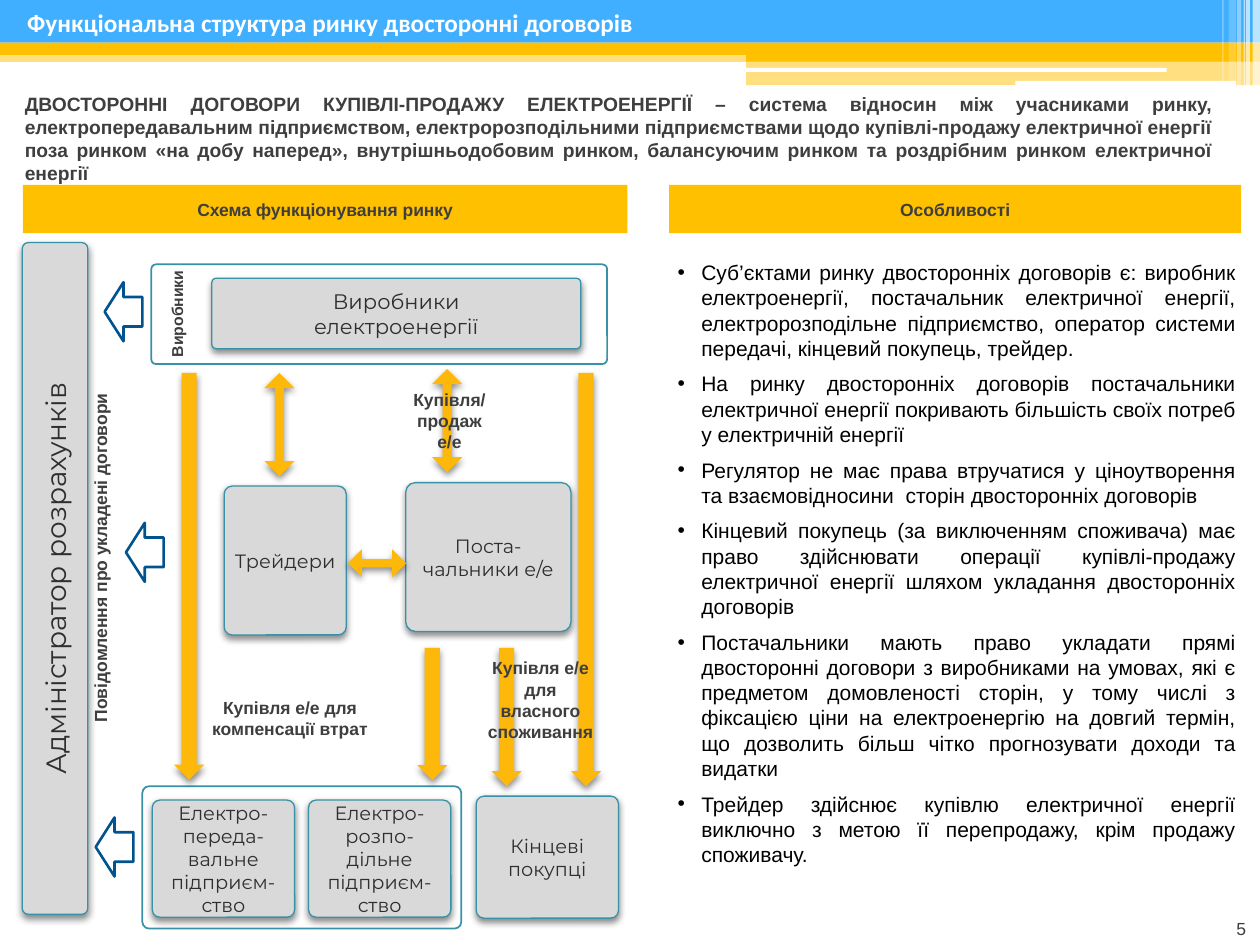
from lxml.etree import SubElement
from pptx import Presentation
from pptx.dml.color import RGBColor
from pptx.enum.shapes import MSO_SHAPE
from pptx.enum.text import MSO_ANCHOR, PP_ALIGN
from pptx.oxml.ns import qn
from pptx.util import Cm, Pt

AMBER, ARROW, BLUE, WHITE = "FFC000", "FEB80A", "40AFFF", "FFFFFF"
GREY, TEAL, NAVY = "D9D9D9", "3891A7", "00538E"
DARK, CARD_TEXT = "3E3E3E", "2E2E2E"

deck = Presentation()
deck.slide_width, deck.slide_height = Cm(25.4), Cm(19.05)
page = deck.slides.add_slide(deck.slide_layouts[6])


def add_block(kind, place, fill=None, line=None, weight=1, opacity=100, adjust=(), raised=False, turn=0):
    block = page.shapes.add_shape(kind, *[Cm(length) for length in place])
    block.rotation = turn
    for index, value in enumerate(adjust):
        block.adjustments[index] = value
    if fill:
        block.fill.solid()
        block.fill.fore_color.rgb = RGBColor.from_string(fill)
    else:
        block.fill.background()
    if opacity < 100:
        color = block.fill._xPr.find(qn("a:solidFill"))[0]
        SubElement(color, qn("a:alpha"), val=str(opacity * 1000))
    if line:
        block.line.color.rgb = RGBColor.from_string(line)
        block.line.width = Pt(weight)
    else:
        block.line.fill.background()
    block.shadow.inherit = False
    if raised:
        effects = block._element.spPr.find(qn("a:effectLst"))
        shadow = SubElement(effects, qn("a:outerShdw"), blurRad=str(Pt(4)), dist=str(Pt(2)),
                            dir="5400000", rotWithShape="0")
        color = SubElement(shadow, qn("a:srgbClr"), val="000000")
        SubElement(color, qn("a:alpha"), val="45000")
    return block


def write(box, lines, size, color=DARK, font="Arial", bold=False,
          align=PP_ALIGN.CENTER, anchor=MSO_ANCHOR.MIDDLE):
    frame = box.text_frame
    frame.word_wrap = True
    frame.vertical_anchor = anchor
    for index, line in enumerate(lines):
        para = frame.add_paragraph() if index else frame.paragraphs[0]
        para.text = line
        para.alignment = align
        for span in para.runs:
            span.font.size = Pt(size)
            span.font.name = font
            span.font.bold = bold
            span.font.color.rgb = RGBColor.from_string(color)


for place, fill, opacity in [
    ((0, 1.02, 25.4, 0.23), AMBER, 50),
    ((0, 0, 25.4, 0.86), BLUE, 100),
    ((0, 0.86, 25.4, 0.25), AMBER, 100),
    ((15.04, 0.99, 10.36, 0.25), AMBER, 100),
    ((15.04, 1.22, 10.36, 0.5), AMBER, 50),
    ((15.01, 1.37, 8.51, 0.08), WHITE, 100),
    ((20.47, 1.63, 4.45, 0.1), WHITE, 100),
    ((25.25, 0, 0.15, 1.73), WHITE, 65),
    ((25.12, 0, 0.08, 1.73), WHITE, 65),
    ((25.07, 0, 0.03, 1.73), WHITE, 60),
    ((24.94, 0, 0.08, 1.73), WHITE, 40),
    ((24.77, 0, 0.15, 1.63), WHITE, 20),
    ((24.64, 0, 0.03, 1.63), WHITE, 30),
]:
    add_block(MSO_SHAPE.RECTANGLE, place, fill, opacity=opacity)

title = page.shapes.add_textbox(Cm(0.3), Cm(0), Cm(24.59), Cm(0.91))
write(title, ["Функціональна структура ринку двосторонні договорів"], 14.4, WHITE, "Calibri", True,
      PP_ALIGN.LEFT)

intro = page.shapes.add_textbox(Cm(0.25), Cm(1.73), Cm(24.46), Cm(2.01))
write(intro, [
    "ДВОСТОРОННІ ДОГОВОРИ КУПІВЛІ-ПРОДАЖУ ЕЛЕКТРОЕНЕРГІЇ – система відносин між учасниками ринку, "
    "електропередавальним підприємством, електророзподільними підприємствами щодо купівлі-продажу "
    "електричної енергії поза ринком «на добу наперед», внутрішньодобовим ринком, балансуючим ринком "
    "та роздрібним ринком електричної енергії",
], 11, bold=True, align=PP_ALIGN.JUSTIFY, anchor=MSO_ANCHOR.TOP)

for left, width, heading in [(0.46, 12.19, "Схема функціонування ринку"), (13.49, 11.53, "Особливості")]:
    header = add_block(MSO_SHAPE.RECTANGLE, (left, 3.73, width, 0.97), AMBER)
    write(header, [heading], 10, bold=True)

features = page.shapes.add_textbox(Cm(13.41), Cm(5.11), Cm(11.76), Cm(13.64))
write(features, [
    "Суб’єктами ринку двосторонніх договорів є: виробник електроенергії, постачальник електричної "
    "енергії, електророзподільне підприємство, оператор системи передачі, кінцевий покупець, трейдер.",
    "На ринку двосторонніх договорів постачальники електричної енергії покривають більшість своїх "
    "потреб у електричній енергії",
    "Регулятор не має права втручатися у ціноутворення та взаємовідносини  сторін двосторонніх договорів",
    "Кінцевий покупець (за виключенням споживача) має право здійснювати операції купівлі-продажу "
    "електричної енергії шляхом укладання двосторонніх договорів",
    "Постачальники мають право укладати прямі двосторонні договори з виробниками на умовах, які є "
    "предметом домовленості сторін, у тому числі з фіксацією ціни на електроенергію на довгий термін, "
    "що дозволить більш чітко прогнозувати доходи та видатки",
    "Трейдер здійснює купівлю електричної енергії виключно з метою її перепродажу, крім продажу споживачу.",
], 12, "000000", align=PP_ALIGN.JUSTIFY, anchor=MSO_ANCHOR.TOP)
for index, para in enumerate(features.text_frame.paragraphs):
    if index:
        para.space_before = Pt(6)
    properties = para._p.get_or_add_pPr()
    properties.set("marL", str(Cm(0.48)))
    properties.set("indent", str(-Cm(0.48)))
    SubElement(properties, qn("a:buFont"), typeface="Arial")
    SubElement(properties, qn("a:buChar"), char="•")

for place in [(3.05, 5.33, 9.19, 2.01), (2.87, 15.85, 6.43, 2.87)]:
    add_block(MSO_SHAPE.ROUNDED_RECTANGLE, place, line=TEAL, adjust=[0.048])

for place, lines, size, inset, corner, turn in [
    ((-5.66, 11, 13.54, 1.32), ["Адміністратор розрахунків"], 16, 0.25, 0.09, 270),
    ((4.27, 5.61, 7.44, 1.42), ["Виробники", "електроенергії"], 12, 0.25, 0.064, 0),
    ((4.52, 9.8, 2.46, 3), ["Трейдери"], 11, 0.1, 0.064, 0),
    ((8.18, 9.73, 3.33, 3), ["Поста-чальники е/е"], 11, 0.1, 0.064, 0),
    ((3.07, 16.13, 2.87, 2.36), ["Електро-переда-вальне підприєм-ство"], 11, 0.25, 0.064, 0),
    ((6.22, 16.13, 2.87, 2.36), ["Електро-розпо-дільне підприєм-ство"], 11, 0.25, 0.064, 0),
    ((9.6, 16.05, 2.87, 2.46), ["Кінцеві покупці"], 11, 0.1, 0.064, 0),
]:
    card = add_block(MSO_SHAPE.ROUNDED_RECTANGLE, place, GREY, TEAL, 0.75, adjust=[corner],
                     raised=True, turn=turn)
    card.text_frame.margin_left = card.text_frame.margin_right = Cm(inset)
    write(card, lines, size, CARD_TEXT, "Montserrat")

for left, top in [(2.11, 5.69), (2.54, 10.54), (1.93, 16.48)]:
    add_block(MSO_SHAPE.LEFT_ARROW, (left, top, 0.76, 1.19), line=NAVY, weight=1.5)

for place, turn in [
    ((5.33, 7.52, 0.61, 2.08), 0),
    ((8.71, 7.44, 0.61, 2.08), 0),
    ((7.32, 10.77, 0.56, 1.17), 90),
]:
    add_block(MSO_SHAPE.UP_DOWN_ARROW, place, ARROW, adjust=[0.5, 0.297], raised=True, turn=turn)

for left, top, height in [(3.51, 7.52, 8.2), (11.51, 7.52, 8.33), (8.41, 13.06, 2.67), (9.91, 13.06, 2.79)]:
    add_block(MSO_SHAPE.DOWN_ARROW, (left, top, 0.61, height), ARROW, raised=True)

for place, lines, size, turn in [
    ((2.41, 5.97, 2.39, 0.71), ["Виробники"], 9, 270),
    ((-2.67, 10.9, 9.4, 0.69), ["Повідомлення про укладені договори"], 10, 270),
    ((8.03, 7.72, 2.06, 1.55), ["Купівля/", "продаж е/е"], 10, 0),
    ((3.99, 13.92, 3.71, 1.12), ["Купівля е/е для компенсації втрат"], 10, 0),
    ((9.5, 13.13, 2.79, 1.96), ["Купівля е/е для власного споживання"], 10, 0),
]:
    label = page.shapes.add_textbox(*[Cm(length) for length in place])
    label.rotation = turn
    write(label, lines, size, bold=True, anchor=MSO_ANCHOR.TOP)

number = page.shapes.add_textbox(Cm(24.18), Cm(18.34), Cm(1.19), Cm(0.71))
write(number, ["5"], 10, align=PP_ALIGN.RIGHT, anchor=MSO_ANCHOR.BOTTOM)

deck.save("out.pptx")
